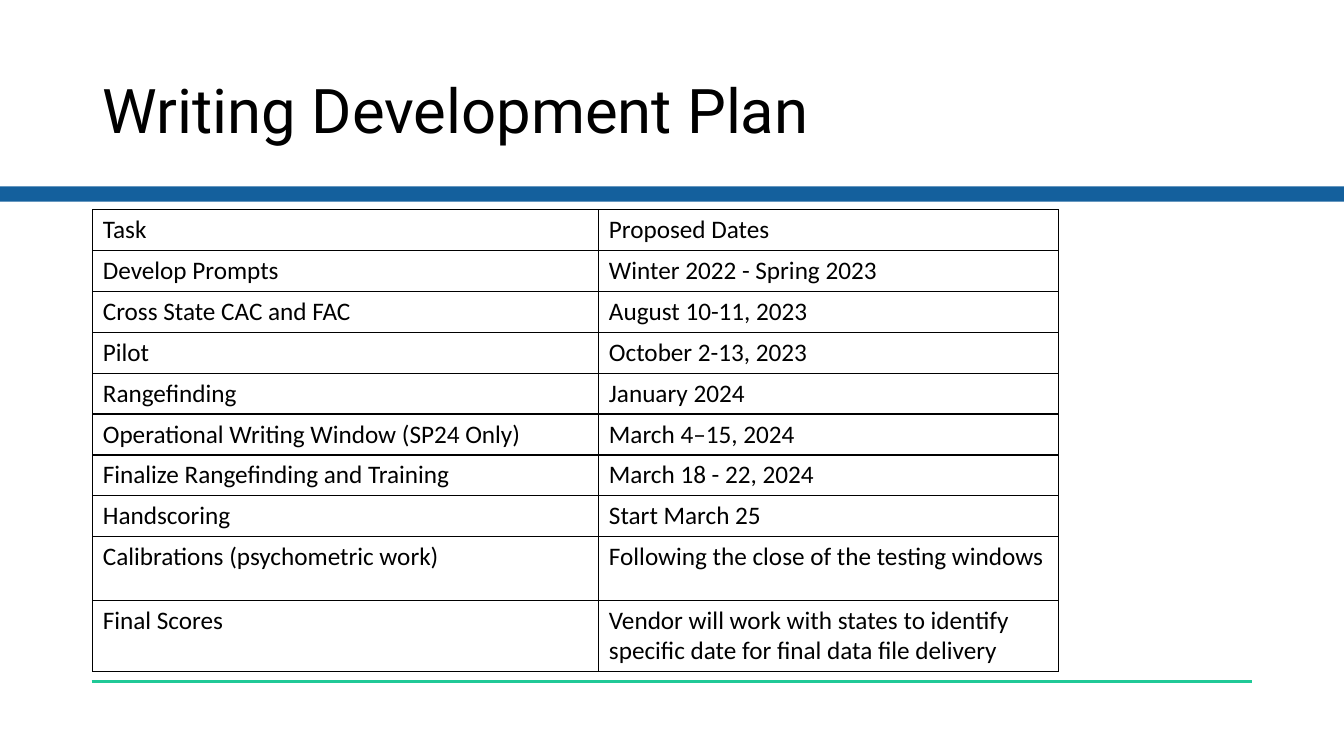
from lxml.etree import SubElement
from pptx import Presentation
from pptx.dml.color import RGBColor
from pptx.enum.shapes import MSO_CONNECTOR, MSO_SHAPE
from pptx.enum.text import MSO_ANCHOR, PP_ALIGN
from pptx.oxml.ns import qn
from pptx.util import Pt

PX = 9144  # EMU per px, 100 px to the inch
COLORS = {"text": "000000", "band": "14609D", "rule": "20C997", "border": "000000"}
PLAN = [
    ("Task", "Proposed Dates"),
    ("Develop Prompts", "Winter 2022 - Spring 2023"),
    ("Cross State CAC and FAC", "August 10-11, 2023"),
    ("Pilot", "October 2-13, 2023"),
    ("Rangefinding", "January 2024"),
    ("Operational Writing Window (SP24 Only)", "March 4–15, 2024"),
    ("Finalize Rangefinding and Training", "March 18 - 22, 2024"),
    ("Handscoring", "Start March 25"),
    ("Calibrations (psychometric work)", "Following the close of the testing windows"),
    ("Final Scores",
     "Vendor will work with states to identify specific date for final data file delivery"),
]
COL_WIDTHS = [502, 456]
ROW_HEIGHTS = [39] * 8 + [63, 55]


def emu(*lengths):
    return [n * PX for n in lengths]


def rgb(name):
    return RGBColor.from_string(COLORS[name])


def set_font(p, name, size):
    p.font.name = name
    p.font.size = Pt(size)
    p.font.color.rgb = rgb("text")


def add_title(slide, box, text):
    sp = slide.shapes.title
    sp.left, sp.top, sp.width, sp.height = emu(*box)
    tf = sp.text_frame
    tf.text = text
    tf.word_wrap = True
    tf.vertical_anchor = MSO_ANCHOR.MIDDLE
    p = tf.paragraphs[0]
    p.alignment = PP_ALIGN.LEFT
    p.line_spacing = 0.9
    set_font(p, "Roboto", 44)


def add_band(slide, box):
    sp = slide.shapes.add_shape(MSO_SHAPE.RECTANGLE, *emu(*box))
    sp.shadow.inherit = False
    sp.fill.solid()
    sp.fill.fore_color.rgb = rgb("band")
    sp.line.fill.background()


def add_rule(slide, x, y, width):
    line = slide.shapes.add_connector(MSO_CONNECTOR.STRAIGHT, *emu(x, y, x + width, y))
    line.line.color.rgb = rgb("rule")
    line.line.width = Pt(1.75)
    SubElement(line._element.spPr, qn("a:effectLst"))


def add_borders(cell):
    tc_pr = cell._tc.get_or_add_tcPr()
    for side in ("a:lnL", "a:lnR", "a:lnT", "a:lnB"):
        ln = SubElement(tc_pr, qn(side), w=str(Pt(1)))
        fill = SubElement(ln, qn("a:solidFill"))
        SubElement(fill, qn("a:srgbClr"), val=COLORS["border"])


def add_plan_table(slide, x, y):
    frame = slide.shapes.add_table(len(PLAN), len(COL_WIDTHS),
                                   *emu(x, y, sum(COL_WIDTHS), sum(ROW_HEIGHTS)))
    table = frame.table
    table.first_row = table.horz_banding = False
    for column, width in zip(table.columns, COL_WIDTHS):
        column.width = width * PX
    for row, height, texts in zip(table.rows, ROW_HEIGHTS, PLAN):
        row.height = height * PX
        for cell, text in zip(row.cells, texts):
            cell.text = text
            set_font(cell.text_frame.paragraphs[0], "Calibri", 18)
            add_borders(cell)
            cell.fill.background()


def main():
    prs = Presentation()
    prs.slide_width, prs.slide_height = emu(1333, 750)
    slide = prs.slides.add_slide(prs.slide_layouts[5])
    add_rule(slide, 91, 676, 1151)
    add_band(slide, (0, 185, 1333, 15))
    add_title(slide, (92, 40, 1150, 145), "Writing Development Plan")
    add_plan_table(slide, 92, 208)
    prs.save("out.pptx")


if __name__ == "__main__":
    main()
